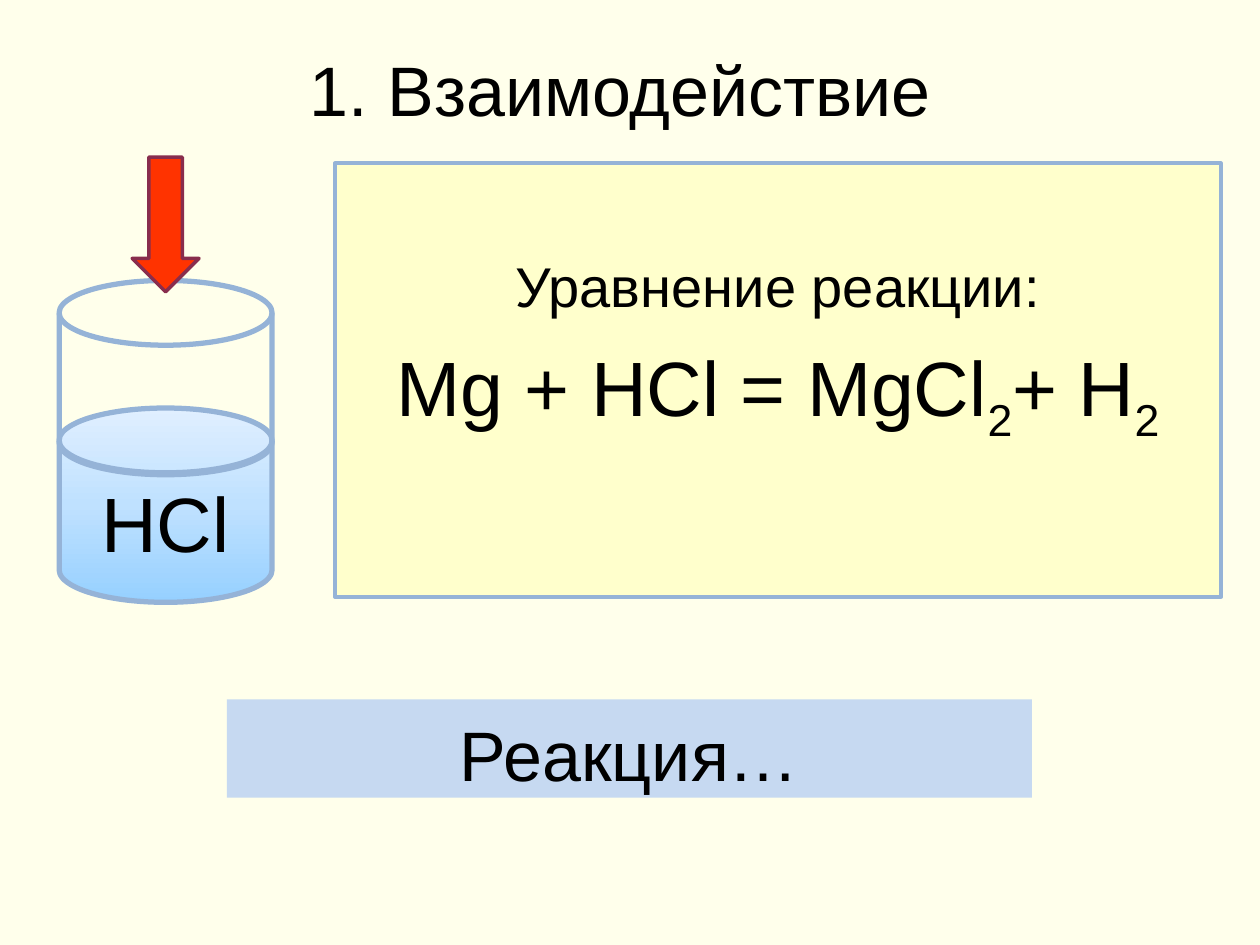
from copy import deepcopy
from dataclasses import dataclass

from pptx import Presentation
from pptx.dml.color import RGBColor
from pptx.enum.shapes import MSO_SHAPE
from pptx.enum.text import MSO_ANCHOR, PP_ALIGN
from pptx.oxml.ns import qn
from pptx.util import Pt

RECTANGLE = MSO_SHAPE.RECTANGLE
CYLINDER = MSO_SHAPE.FLOWCHART_MAGNETIC_DISK
DOWN_ARROW = MSO_SHAPE.DOWN_ARROW
CENTER = PP_ALIGN.CENTER
TOP, MIDDLE = MSO_ANCHOR.TOP, MSO_ANCHOR.MIDDLE


@dataclass(frozen=True)
class Theme:
    """Colours, font and type sizes of the slide."""
    font: str = "Arial"
    ink: str = "000000"
    page: str = "FFFFEB"
    panel: str = "FFFFCC"
    outline: str = "95B3D7"
    banner: str = "C6D9F1"
    arrow: str = "FF3300"
    arrow_edge: str = "882D4D"
    liquid: tuple = ("96D0FF", "BFE1FF", "E0EFFF")
    caption: int = 32
    heading: int = 40
    formula: int = 44


THEME = Theme()


def color(code):
    """Turn a hex code into a colour."""
    return RGBColor.from_string(code)


def add_figure(shapes, kind, box, fill=None, line=None, width=0):
    """Add a preset shape with the given fill and outline."""
    figure = shapes.add_shape(kind, *map(Pt, box))
    figure.shadow.inherit = False
    if fill:
        figure.fill.solid()
        figure.fill.fore_color.rgb = color(fill)
    else:
        figure.fill.background()
    if line:
        figure.line.color.rgb = color(line)
        figure.line.width = Pt(width)
    else:
        figure.line.fill.background()
    return figure


def format_runs(para, size):
    """Centre a paragraph and set the type of its runs."""
    para.alignment = CENTER
    for span in para.runs:
        span.font.name = THEME.font
        span.font.size = Pt(size)
        span.font.color.rgb = color(THEME.ink)


def write_line(shape, text, size, anchor=MIDDLE, top=3.6, wrap=True):
    """Put one centred line of text in a shape."""
    frame = shape.text_frame
    frame.word_wrap = wrap
    frame.vertical_anchor = anchor
    frame.margin_top = Pt(top)
    frame.text = text
    format_runs(frame.paragraphs[0], size)
    return frame


def fill_liquid(shape):
    """Shade a shape upwards through the liquid colours."""
    shape.fill.gradient()
    shape.fill.gradient_angle = 90
    stop_list = shape.fill.gradient_stops
    first = shape._element.spPr.find(".//" + qn("a:gs"))
    first.addnext(deepcopy(first))
    stop_list = shape.fill.gradient_stops
    for stop, position, code in zip(stop_list, (0, 0.5, 1), THEME.liquid):
        stop.position = position
        stop.color.rgb = color(code)


def add_title(page, box, text):
    """Add the slide title."""
    title = page.shapes.add_textbox(*map(Pt, box))
    write_line(title, text, THEME.heading)


def add_beaker(page, box, label):
    """Add a beaker of liquid with an arrow pointing into it."""
    left, top, width, height = box
    glass_height, arrow_width, arrow_height = 111, 38.2, 77
    shapes = page.shapes.add_group_shape().shapes
    liquid_box = (left, top + height - glass_height, width, glass_height)
    liquid = add_figure(shapes, CYLINDER, liquid_box, line=THEME.outline, width=3)
    fill_liquid(liquid)
    write_line(liquid, label, THEME.formula, wrap=False)
    glass_box = (left, top + 70.5, width, glass_height)
    add_figure(shapes, CYLINDER, glass_box, line=THEME.outline, width=3)
    arrow_box = (left + (width - arrow_width) / 2, top, arrow_width, arrow_height)
    add_figure(shapes, DOWN_ARROW, arrow_box, THEME.arrow, THEME.arrow_edge, 2)


def add_equation_panel(page, box, caption, terms):
    """Add the panel with a caption and a formula of (text, is_subscript) terms."""
    panel = add_figure(page.shapes, RECTANGLE, box, THEME.panel, THEME.outline, 2.25)
    frame = write_line(panel, caption, THEME.caption, TOP, top=50.5)
    formula = frame.add_paragraph()
    formula.space_before = Pt(12)
    for text, is_subscript in terms:
        span = formula.add_run()
        span.text = text
        if is_subscript:
            span.font._element.set("baseline", "-25000")
    format_runs(formula, THEME.formula)


def add_banner(page, box, text):
    """Add the coloured strip that asks for the reaction type."""
    banner = add_figure(page.shapes, RECTANGLE, box, THEME.banner)
    write_line(banner, text, THEME.heading, TOP, top=7)


def main():
    """Build and save the slide."""
    deck = Presentation()
    deck.slide_width, deck.slide_height = Pt(720), Pt(540)
    page = deck.slides.add_slide(deck.slide_layouts[6])
    page.background.fill.solid()
    page.background.fill.fore_color.rgb = color(THEME.page)
    add_banner(page, (129.6, 399.6, 460.1, 56.2), "Реакция…")
    add_title(page, (36, 16.5, 648, 68), "1. Взаимодействие ")
    add_beaker(page, (33.8, 89.8, 121.7, 254.4), "HCl")
    terms = [("Mg + HCl = MgCl", False), ("2", True), ("+ H", False), ("2", True)]
    add_equation_panel(page, (191.5, 93.4, 506.2, 247.7), "Уравнение реакции:", terms)
    deck.save("out.pptx")


if __name__ == "__main__":
    main()
